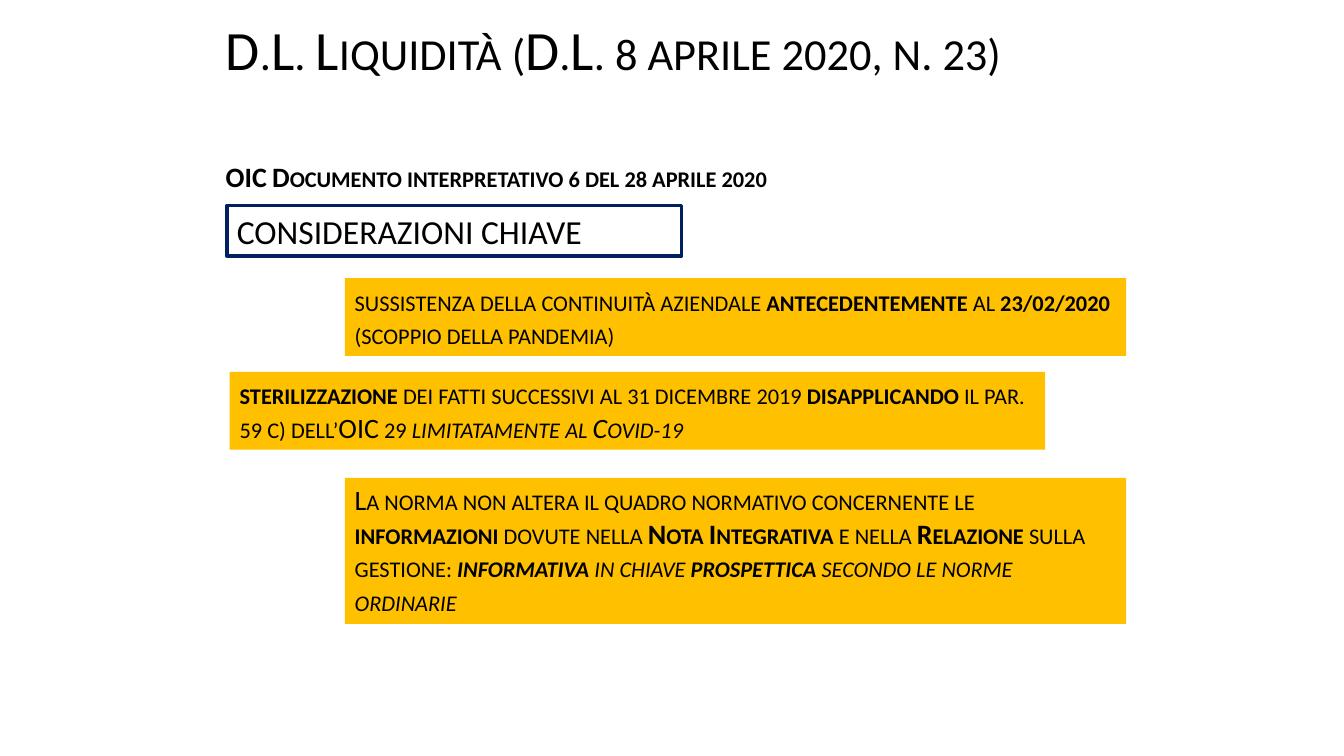
"""Build the slide on the key points of the OIC interpretative document."""
from dataclasses import dataclass

import pptx
import pptx.dml.color
import pptx.enum.shapes
import pptx.enum.text
import pptx.slide
import pptx.util
from pptx.util import Cm

COLORS = {"text": "000000", "box": "FFC000", "frame": "002060"}
FONT = "Calibri"


@dataclass(frozen=True)
class Span:
    text: str
    bold: bool = False
    italic: bool = False


@dataclass(frozen=True)
class Block:
    left: float
    top: float
    width: float
    height: float
    spans: tuple[Span, ...]
    size: float = 20
    small_caps: bool = True
    fill: str | None = None
    line: str | None = None
    anchor: pptx.enum.text.MSO_ANCHOR = pptx.enum.text.MSO_ANCHOR.TOP
    line_spacing: float = 1.0


BLOCKS = (
    Block(5.44, 0.64, 23.27, 1.37,
          (Span("D.L. Liquidità (D.L. 8 aprile 2020, n. 23)"),),
          size=39.6, anchor=pptx.enum.text.MSO_ANCHOR.MIDDLE, line_spacing=0.9),
    Block(5.44, 3.89, 22.81, 1.12,
          (Span("OIC Documento interpretativo 6 del 28 aprile 2020", bold=True),)),
    Block(5.72, 5.18, 11.46, 1.27, (Span("CONSIDERAZIONI CHIAVE"),),
          size=24, small_caps=False, line="frame"),
    Block(8.69, 7.01, 19.69, 1.96, (
        Span("sussistenza della continuità aziendale "),
        Span("antecedentemente", bold=True),
        Span(" al "),
        Span("23/02/2020", bold=True),
        Span(" (scoppio della pandemia)"),
    ), fill="box"),
    Block(5.79, 9.37, 20.55, 1.96, (
        Span("sterilizzazione", bold=True),
        Span(" dei fatti successivi al 31 dicembre 2019 "),
        Span("disapplicando", bold=True),
        Span(" il par. 59 c) dell’OIC 29 "),
        Span("limitatamente al Covid-19", italic=True),
    ), fill="box"),
    Block(8.69, 12.04, 19.69, 3.68, (
        Span("La norma non altera il quadro normativo concernente le "),
        Span("informazioni", bold=True),
        Span(" dovute nella "),
        Span("Nota Integrativa", bold=True),
        Span(" e nella "),
        Span("Relazione", bold=True),
        Span(" sulla gestione: "),
        Span("informativa", bold=True, italic=True),
        Span(" in chiave ", italic=True),
        Span("prospettica", bold=True, italic=True),
        Span(" secondo le norme ordinarie", italic=True),
    ), fill="box"),
)


def color(name: str) -> pptx.dml.color.RGBColor:
    """Return the named palette colour."""
    return pptx.dml.color.RGBColor.from_string(COLORS[name])


def draw_block(slide: pptx.slide.Slide, block: Block) -> None:
    """Draw a text box or a rectangle with its formatted text."""
    bounds = (Cm(block.left), Cm(block.top), Cm(block.width), Cm(block.height))
    if block.fill or block.line:
        shape = slide.shapes.add_shape(pptx.enum.shapes.MSO_SHAPE.RECTANGLE, *bounds)
        shape.shadow.inherit = False
    else:
        shape = slide.shapes.add_textbox(*bounds)
    if block.fill:
        shape.fill.solid()
        shape.fill.fore_color.rgb = color(block.fill)
    else:
        shape.fill.background()
    if block.line:
        shape.line.color.rgb = color(block.line)
        shape.line.width = pptx.util.Pt(2.5)
    else:
        shape.line.fill.background()

    text_frame = shape.text_frame
    text_frame.word_wrap = True
    text_frame.vertical_anchor = block.anchor
    paragraph = text_frame.paragraphs[0]
    paragraph.alignment = pptx.enum.text.PP_ALIGN.LEFT
    paragraph.line_spacing = block.line_spacing
    for span in block.spans:
        run = paragraph.add_run()
        run.text = span.text
        run.font.name = FONT
        run.font.size = pptx.util.Pt(block.size)
        run.font.bold = span.bold
        run.font.italic = span.italic
        run.font.color.rgb = color("text")
        if block.small_caps:
            run._r.get_or_add_rPr().set("cap", "small")


def main() -> None:
    """Create and save the presentation."""
    presentation = pptx.Presentation()
    presentation.slide_width = Cm(33.87)
    presentation.slide_height = Cm(19.05)
    slide = presentation.slides.add_slide(presentation.slide_layouts[6])
    for block in BLOCKS:
        draw_block(slide, block)
    presentation.save("out.pptx")


if __name__ == "__main__":
    main()
